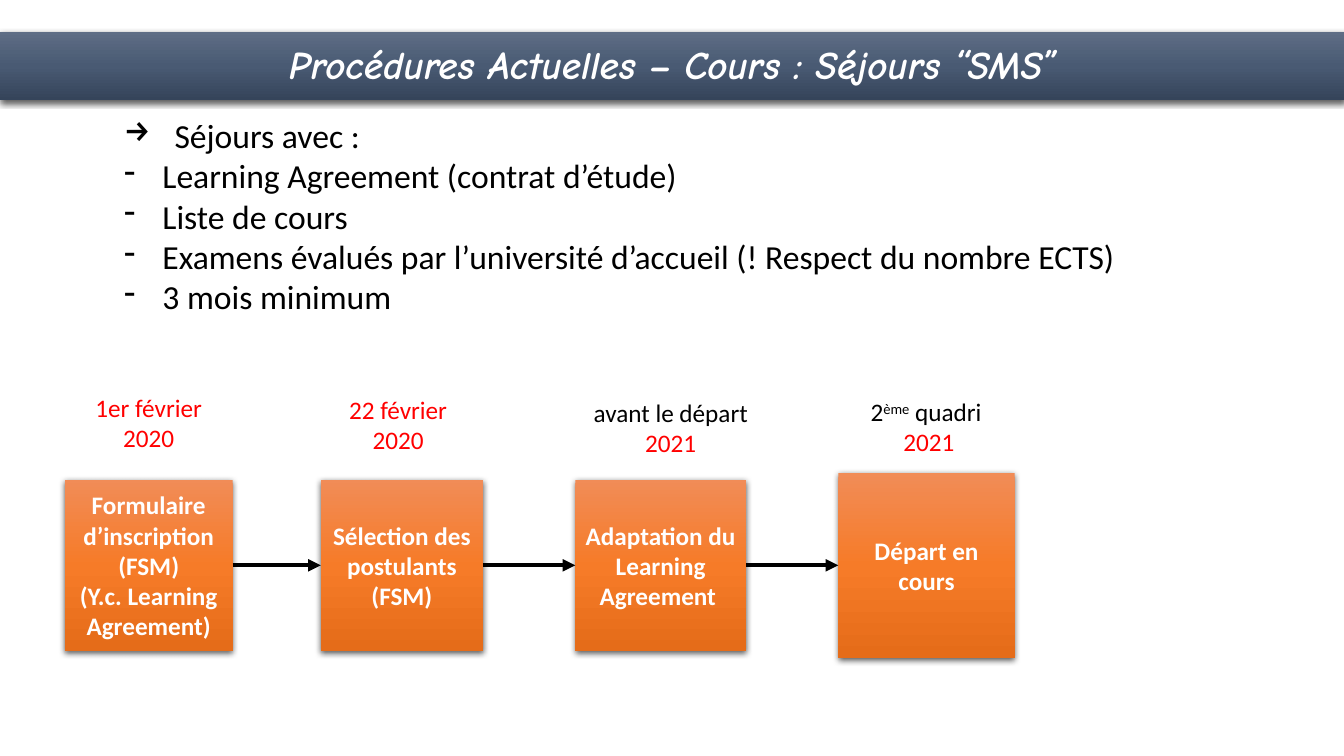
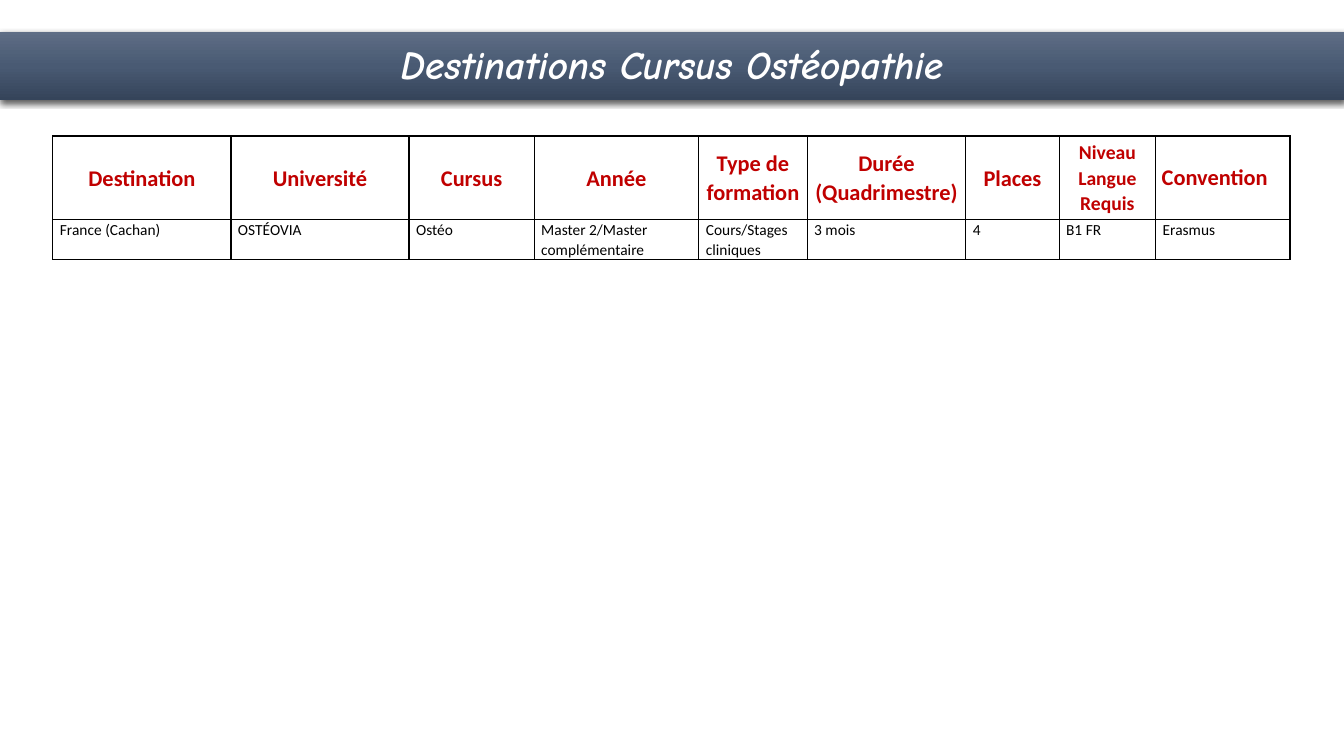
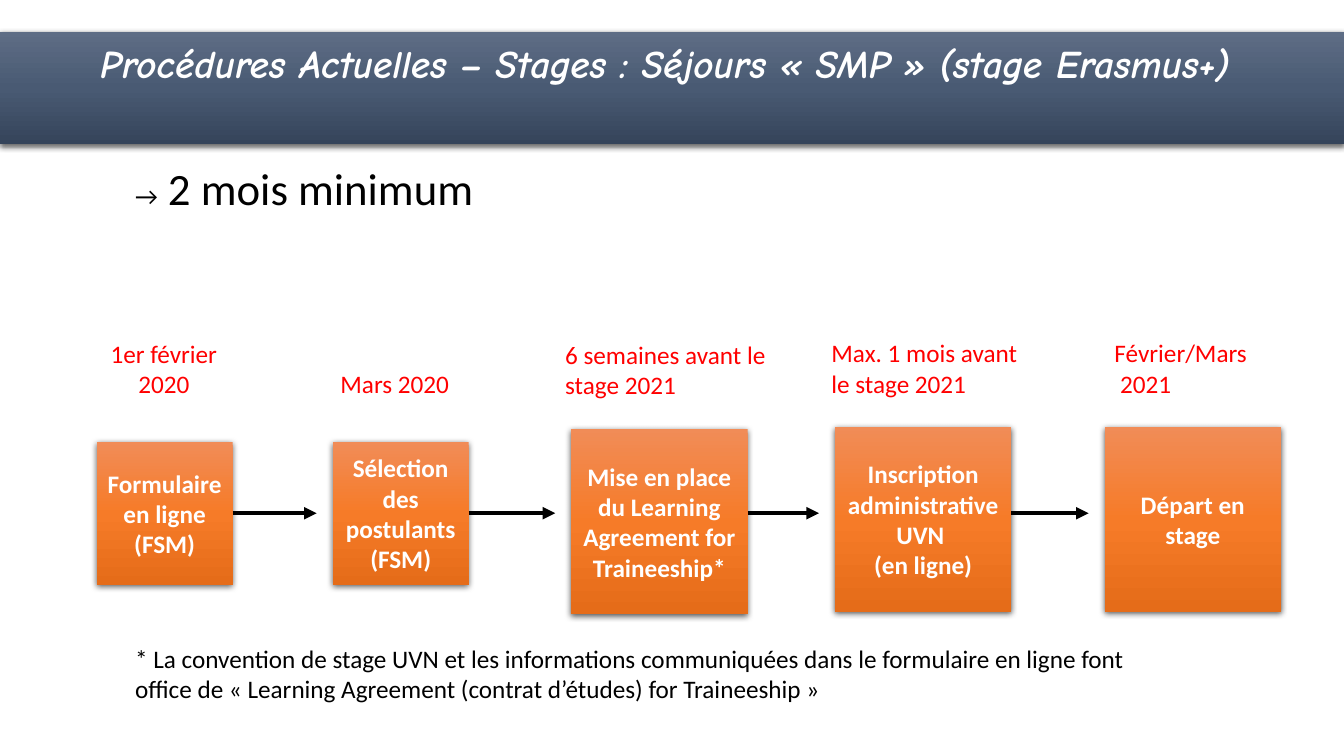
from lxml import etree
from pptx import Presentation
from pptx import util as u
from pptx.dml.color import RGBColor
from pptx.enum import shapes, text
from pptx.oxml.ns import qn

COLORS = {
    "white": "FFFFFF", "black": "000000", "date": "FF0000", "header": "C00000",
}
GRADIENTS = {
    "band": ("5E6D85", "495A73", "35445A"),
    "step": ("F18C57", "F67B28", "E56C19"),
}
LEFT, CENTER = text.PP_ALIGN.LEFT, text.PP_ALIGN.CENTER
TOP, MIDDLE = text.MSO_ANCHOR.TOP, text.MSO_ANCHOR.MIDDLE


def child(parent, tag, **attrs):
    return etree.SubElement(parent, qn(tag), {k: str(v) for k, v in attrs.items()})


class Deck:
    COLS, ROWS = 160, 90
    BODY, TITLE = "Calibri", "Comic Neue"

    def __init__(self):
        self.prs = Presentation()
        self.prs.slide_width = u.Inches(13.333)
        self.prs.slide_height = u.Inches(7.5)
        self.s = None

    def x(self, cols):
        return int(self.prs.slide_width * cols / self.COLS)

    def y(self, rows):
        return int(self.prs.slide_height * rows / self.ROWS)

    def area(self, left, top, width, height):
        return self.x(left), self.y(top), self.x(width), self.y(height)

    def slide(self, title, band=8.1):
        self.s = self.prs.slides.add_slide(self.prs.slide_layouts[6])
        sp = self.block((0, 3.8, self.COLS, band), "band")
        tf = sp.text_frame
        tf.margin_left = tf.margin_right = u.Inches(0.24)
        tf.margin_top = tf.margin_bottom = u.Inches(0.12)
        self.fill_text(tf, [title], CENTER, spacing=0.93, size=28, color="white",
                       bold=True, italic=True, font=self.TITLE)

    def add_run(self, p, words, size=18, color="black", bold=False, italic=False,
                font=BODY, baseline=0):
        r = p.add_run()
        r.text = words
        r.font.name, r.font.size = font, u.Pt(size)
        r.font.bold, r.font.italic = bold, italic
        r.font.color.rgb = RGBColor.from_string(COLORS[color])
        if baseline:
            r.font._element.set("baseline", str(baseline * 1000))

    def fill_text(self, tf, paragraphs, align=LEFT, anchor=TOP, spacing=None, **style):
        tf.word_wrap = True
        tf.vertical_anchor = anchor
        for i, runs in enumerate(paragraphs):
            p = tf.add_paragraph() if i else tf.paragraphs[0]
            p.alignment = align
            if spacing:
                p.line_spacing = spacing
            for part in [runs] if isinstance(runs, str) else runs:
                words, extra = (part, {}) if isinstance(part, str) else part
                self.add_run(p, words, **{**style, **extra})

    def text(self, area, paragraphs, align=LEFT, **style):
        tf = self.s.shapes.add_textbox(*self.area(*area)).text_frame
        self.fill_text(tf, paragraphs, align, **style)
        return tf

    def bullet(self, p, mark, indent):
        pPr = p._p.get_or_add_pPr()
        pPr.set("marL", str(u.Inches(indent)))
        pPr.set("indent", str(-u.Inches(indent)))
        child(pPr, "a:buChar", char=mark)

    def block(self, area, gradient):
        sp = self.s.shapes.add_shape(shapes.MSO_SHAPE.RECTANGLE, *self.area(*area))
        sp.line.fill.background()
        sp.fill.gradient()
        sp.fill.gradient_angle = 270
        spPr = sp._element.spPr
        stops = spPr.find(".//" + qn("a:gsLst"))
        for stop in list(stops):
            stops.remove(stop)
        for i, color in enumerate(GRADIENTS[gradient]):
            child(child(stops, "a:gs", pos=i * 50000), "a:srgbClr", val=color)
        sp.shadow.inherit = False
        shadow = child(spPr.find(qn("a:effectLst")), "a:outerShdw",
                       blurRad=u.Pt(4.5), dist=u.Pt(1.5), dir=5400000, rotWithShape=0)
        child(child(shadow, "a:srgbClr", val=COLORS["black"]), "a:alpha", val=63000)
        return sp

    def flow(self, row, steps, gap=0):
        boxes = []
        for area, paragraphs in steps:
            sp = self.block(area, "step")
            self.fill_text(sp.text_frame, paragraphs, CENTER, MIDDLE,
                           color="white", bold=True)
            boxes.append(sp)
        for start, end in zip(boxes, boxes[1:]):
            self.arrow(self.y(row), start, end, self.x(gap))

    def arrow(self, y, start, end, gap):
        cx = self.s.shapes.add_connector(
            shapes.MSO_CONNECTOR.STRAIGHT, start.left + start.width, y, end.left - gap, y)
        if abs(start.top + start.height / 2 - y) < u.Pt(1):
            cx.begin_connect(start, 3)
        if not gap:
            cx.end_connect(end, 1)
        cx.line.color.rgb = RGBColor.from_string(COLORS["black"])
        cx.line.width = u.Pt(3)
        spPr = cx._element.spPr
        child(spPr.find(qn("a:ln")), "a:tailEnd", type="triangle")
        child(spPr, "a:effectLst")

    def cell(self, cell, margin, words, anchor=TOP, **style):
        cell.margin_left = cell.margin_right = u.Inches(margin)
        cell.margin_top = cell.margin_bottom = 0
        tcPr = cell._tc.get_or_add_tcPr()
        for side in ("a:lnL", "a:lnR", "a:lnT", "a:lnB"):
            ln = child(tcPr, side, w=u.Pt(1))
            child(child(ln, "a:solidFill"), "a:srgbClr", val=COLORS["black"])
        cell.fill.background()
        self.fill_text(cell.text_frame, [words], **style)
        cell.vertical_anchor = anchor

    def table(self, left, top, widths, heights, header, rows):
        tbl = self.s.shapes.add_table(
            len(rows) + 1, len(widths),
            *self.area(left, top, sum(widths), sum(heights))).table
        tbl.first_row = tbl.horz_banding = False
        for col, width in zip(tbl.columns, widths):
            col.width = self.x(width)
        for row, height in zip(tbl.rows, heights):
            row.height = self.y(height)
        for c, (words, extra) in enumerate(header):
            style = dict(align=CENTER, anchor=MIDDLE, spacing=1.07, size=16,
                         color="header", bold=True)
            self.cell(tbl.cell(0, c), 0.06, words, **{**style, **extra})
        for r, row in enumerate(rows, 1):
            for c, words in enumerate(row):
                self.cell(tbl.cell(r, c), 0.07, words, spacing=1.07, size=11)


def courses(d):
    d.slide("Procédures Actuelles – Cours : Séjours “SMS”")
    points = [
        "Séjours avec :",
        "Learning Agreement (contrat d’étude)",
        "Liste de cours",
        "Examens évalués par l’université d’accueil (! Respect du nombre ECTS)",
        "3 mois minimum",
    ]
    tf = d.text((13.6, 13.1, 123.1, 31.9), points, size=24)
    for i, p in enumerate(tf.paragraphs):
        d.bullet(p, "-" if i else "→", 0.38 if i else 0.5)
    red = {"color": "date"}
    dates = [
        ((9.5, 46.1, 16.4, 8.5), [[("1er février 2020", red)]]),
        ((39.2, 46.3, 16.4, 8.5), [[("22 février 2020", red)]]),
        ((66.7, 46.7, 26.3, 8.5), [["avant le départ ", ("2021", red)]]),
        ((100.9, 46.6, 18.7, 8.5),
         [["2", ("ème", {"baseline": 30}), " quadri"], [" ", ("2021", red)]]),
    ]
    for area, paragraphs in dates:
        d.text(area, paragraphs, CENTER)
    d.flow(67.3, [
        ((7.7, 57.1, 20, 20.4),
         ["Formulaire d’inscription (FSM)", "(Y.c. Learning Agreement)"]),
        ((38.2, 57.1, 19.3, 20.4), ["Sélection des postulants (FSM)"]),
        ((68.5, 57.1, 20.3, 20.4), ["Adaptation du Learning Agreement "]),
        ((99.8, 56.3, 21, 22), ["Départ en cours"]),
    ])


def destinations(d):
    d.slide("Destinations Cursus Ostéopathie")
    header = [(words, {}) for words in (
        "Destination", "Université", "Cursus", "Année", "Type de formation",
        "Durée (Quadrimestre)", "Places")]
    header += [("Niveau Langue Requis", {"size": 14}),
               ("Convention", {"align": LEFT, "spacing": None})]
    d.table(6.3, 16.2, (21.2, 21.2, 14.9, 19.6, 12.9, 18.9, 11.1, 11.5, 16), (9.9, 4.6),
            header,
            [("France (Cachan)", "OSTÉOVIA", "Ostéo", "Master 2/Master complémentaire",
              "Cours/Stages cliniques", "3 mois", "4", "B1 FR", "Erasmus")])


def internships(d):
    d.slide("Procédures Actuelles – Stages : Séjours « SMP » (stage Erasmus+) ", 13.4)
    d.text((14.9, 18.5, 123.1, 7.7), [["→", (" 2 mois minimum", {"size": 32})]])
    dates = [
        ((11.3, 39.7, 16.4, 8.5), ["1er février 2020"], CENTER),
        ((38.8, 43.2, 16.4, 4.8), ["Mars 2020"], CENTER),
        ((66.1, 39.8, 26.3, 8.5), ["6 semaines avant le stage 2021"], LEFT),
        ((97.8, 39.6, 25.4, 8.5), ["Max. 1 mois avant le stage 2021"], LEFT),
        ((131.5, 39.6, 20.4, 8.5), ["Février/Mars", " 2021"], LEFT),
    ]
    for area, paragraphs, align in dates:
        d.text(area, paragraphs, align, color="date")
    d.flow(61.1, [
        ((11.5, 52.6, 16.2, 17), ["Formulaire en ligne (FSM)"]),
        ((39.6, 52.6, 16.2, 17), ["Sélection des postulants (FSM)"]),
        ((68, 51.1, 21, 22), ["Mise en place du Learning Agreement for Traineeship*"]),
        ((99.4, 50.8, 21, 22), ["Inscription administrative UVN ", "(en ligne)"]),
        ((131.5, 50.8, 21, 22), ["Départ en stage"]),
    ], gap=1.9)
    d.text((14.9, 76, 120.5, 8.5), [
        "* La convention de stage UVN et les informations communiquées dans le formulaire "
        "en ligne font office de « Learning Agreement (contrat d’études) for Traineeship »"])


def main():
    d = Deck()
    for build in (courses, destinations, internships):
        build(d)
    d.prs.save("out.pptx")


if __name__ == "__main__":
    main()
